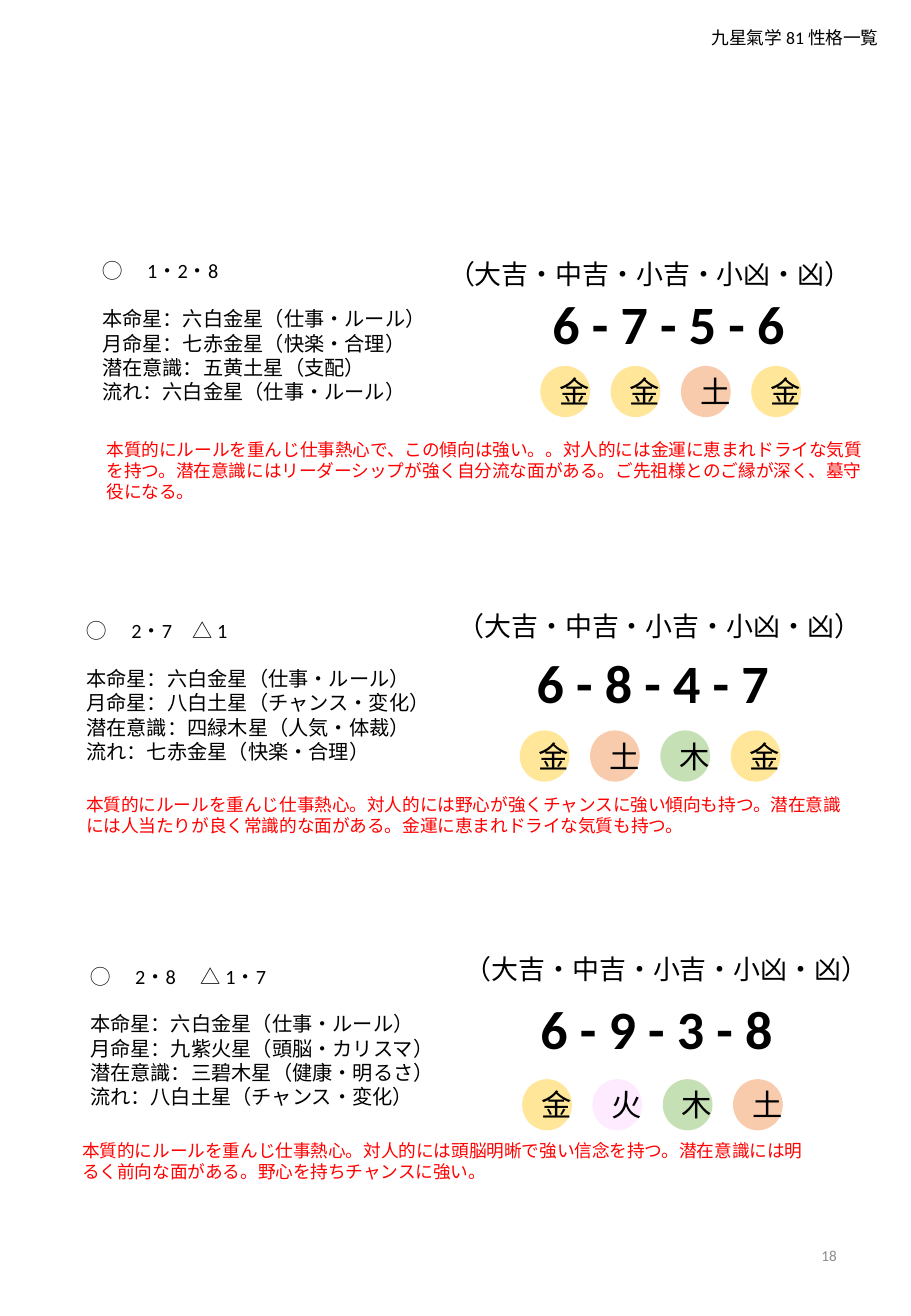
from dataclasses import dataclass

from pptx import Presentation
from pptx import util as u
from pptx.dml.color import RGBColor
from pptx.enum import shapes, text
from pptx.oxml.ns import qn
from pptx.slide import Slide
from pptx.text.text import TextFrame

FONT = "Calibri"
COLORS = {
    "ink": "000000", "note": "FF0000", "page": "8C8C8C",
    "金": "FFE699", "土": "F8CBAD", "木": "C5E0B4", "火": "FEEBFF",
}
ELEMENT_OF_STAR = {3: "木", 4: "木", 5: "土", 6: "金", 7: "金", 8: "土", 9: "火"}
LUCK_SCALE = "（大吉・中吉・小吉・小凶・凶）"
CIRCLE_STEP = 1.47
LEFT, RIGHT = text.PP_ALIGN.LEFT, text.PP_ALIGN.RIGHT
TOP, MIDDLE = text.MSO_ANCHOR.TOP, text.MSO_ANCHOR.MIDDLE


@dataclass
class Box:
    """Position and size in centimetres."""
    left: float
    top: float
    width: float
    height: float

    def lengths(self) -> list[u.Length]:
        return [u.Cm(v) for v in (self.left, self.top, self.width, self.height)]


@dataclass
class Reading:
    """One combination of stars with its description."""
    stars: tuple[int, ...]
    profile: list[str]
    note: str
    profile_box: Box
    luck_box: Box
    note_box: Box
    circles_at: tuple[float, float]


READINGS = [
    Reading(
        (6, 7, 5, 6),
        ["◯　 1・2・8", "本命星：六白金星（仕事・ルール）", "月命星：七赤金星（快楽・合理）",
         "潜在意識：五黄土星（支配）", "流れ：六白金星（仕事・ルール）"],
        "本質的にルールを重んじ仕事熱心で、この傾向は強い。。対人的には金運に恵まれドライな気質を持つ。"
        "潜在意識にはリーダーシップが強く自分流な面がある。ご先祖様とのご縁が深く、墓守役になる。",
        Box(1.88, 5.28, 7.57, 3.33), Box(9.12, 5.26, 9.07, 0.94),
        Box(1.98, 9.04, 16.38, 1.6), (11.3, 7.65)),
    Reading(
        (6, 8, 4, 7),
        ["◯　 2・7　△ 1", "本命星：六白金星（仕事・ルール）", "月命星：八白土星（チャンス・変化）",
         "潜在意識：四緑木星（人気・体裁）", "流れ：七赤金星（快楽・合理）"],
        "本質的にルールを重んじ仕事熱心。対人的には野心が強くチャンスに強い傾向も持つ。"
        "潜在意識には人当たりが良く常識的な面がある。金運に恵まれドライな気質も持つ。",
        Box(1.55, 12.8, 8.26, 3.33), Box(9.32, 12.62, 9.07, 0.94),
        Box(1.55, 16.46, 16.38, 1.14), (10.87, 15.27)),
    Reading(
        (6, 9, 3, 8),
        ["◯　 2・8 　△ 1・7", "本命星：六白金星（仕事・ルール）", "月命星：九紫火星（頭脳・カリスマ）",
         "潜在意識：三碧木星（健康・明るさ）", "流れ：八白土星（チャンス・変化）"],
        "本質的にルールを重んじ仕事熱心。対人的には頭脳明晰で強い信念を持つ。"
        "潜在意識には明るく前向な面がある。野心を持ちチャンスに強い。",
        Box(1.63, 20.02, 8.51, 3.33), Box(9.47, 19.79, 9.07, 0.94),
        Box(1.47, 23.7, 15.9, 1.14), (10.92, 22.56)),
]


def write(frame: TextFrame, content: str, size: float, color: str = "ink", bold: bool = False,
          align: text.PP_ALIGN = LEFT, anchor: text.MSO_ANCHOR = TOP) -> None:
    frame.text = content
    frame.word_wrap = True
    frame.auto_size = text.MSO_AUTO_SIZE.NONE
    frame.vertical_anchor = anchor
    for paragraph in frame.paragraphs:
        paragraph.alignment = align
        paragraph.space_before = u.Pt(0)
        for run in paragraph.runs:
            run.font.name, run.font.size, run.font.bold = FONT, u.Pt(size), bold
            run.font.color.rgb = RGBColor.from_string(COLORS[color])


def add_label(slide: Slide, box: Box, content: str, size: float, color: str = "ink",
              bold: bool = False, align: text.PP_ALIGN = LEFT,
              anchor: text.MSO_ANCHOR = TOP) -> None:
    label = slide.shapes.add_textbox(*box.lengths())
    write(label.text_frame, content, size, color, bold, align, anchor)


def place(placeholder, box: Box) -> TextFrame:
    placeholder.left, placeholder.top, placeholder.width, placeholder.height = box.lengths()
    return placeholder.text_frame


def fill_profile(frame: TextFrame, lines: list[str]) -> None:
    write(frame, "\n".join(lines), 12)
    for paragraph in frame.paragraphs:
        properties = paragraph._p.get_or_add_pPr()
        properties.set("marL", "0")
        properties.set("indent", "0")
        properties.append(properties.makeelement(qn("a:buNone"), {}))
    frame.paragraphs[0].space_after = u.Pt(14)


def add_element_circle(slide: Slide, box: Box, element: str) -> None:
    circle = slide.shapes.add_shape(shapes.MSO_SHAPE.OVAL, *box.lengths())
    circle.shadow.inherit = False
    circle.fill.solid()
    circle.fill.fore_color.rgb = RGBColor.from_string(COLORS[element])
    circle.line.fill.background()
    write(circle.text_frame, element, 18, align=text.PP_ALIGN.CENTER, anchor=MIDDLE)


def add_reading(slide: Slide, profile, reading: Reading) -> None:
    # Profile list
    box = reading.profile_box
    fill_profile(place(profile, box), reading.profile)

    # Star numbers beside the profile, luck scale above them
    numbers_box = Box(box.left + 9.42, box.top + 0.66, 6.4, 1.63)
    add_label(slide, numbers_box, " - ".join(map(str, reading.stars)), 32, bold=True)
    add_label(slide, reading.luck_box, LUCK_SCALE, 16)

    # Element of each star
    left, top = reading.circles_at
    for index, star in enumerate(reading.stars):
        circle_box = Box(left + index * CIRCLE_STEP, top, 1.04, 1.07)
        add_element_circle(slide, circle_box, ELEMENT_OF_STAR[star])

    # Description
    add_label(slide, reading.note_box, reading.note, 10.5, "note")


def main() -> None:
    deck = Presentation()
    deck.slide_width, deck.slide_height = u.Cm(19.05), u.Cm(27.51)
    slide = deck.slides.add_slide(deck.slide_layouts.get_by_name("Comparison"))
    title, *profiles, spare = slide.placeholders

    # Header and page number
    write(place(title, Box(14.63, 0.43, 4.06, 0.71)), "九星氣学 81 性格一覧", 10.5)
    add_label(slide, Box(13.46, 25.5, 4.29, 1.47), "18", 9, "page", align=RIGHT, anchor=MIDDLE)

    # Readings
    for profile, reading in zip(profiles, READINGS):
        add_reading(slide, profile, reading)
    spare.element.getparent().remove(spare.element)

    deck.save("out.pptx")


if __name__ == "__main__":
    main()
